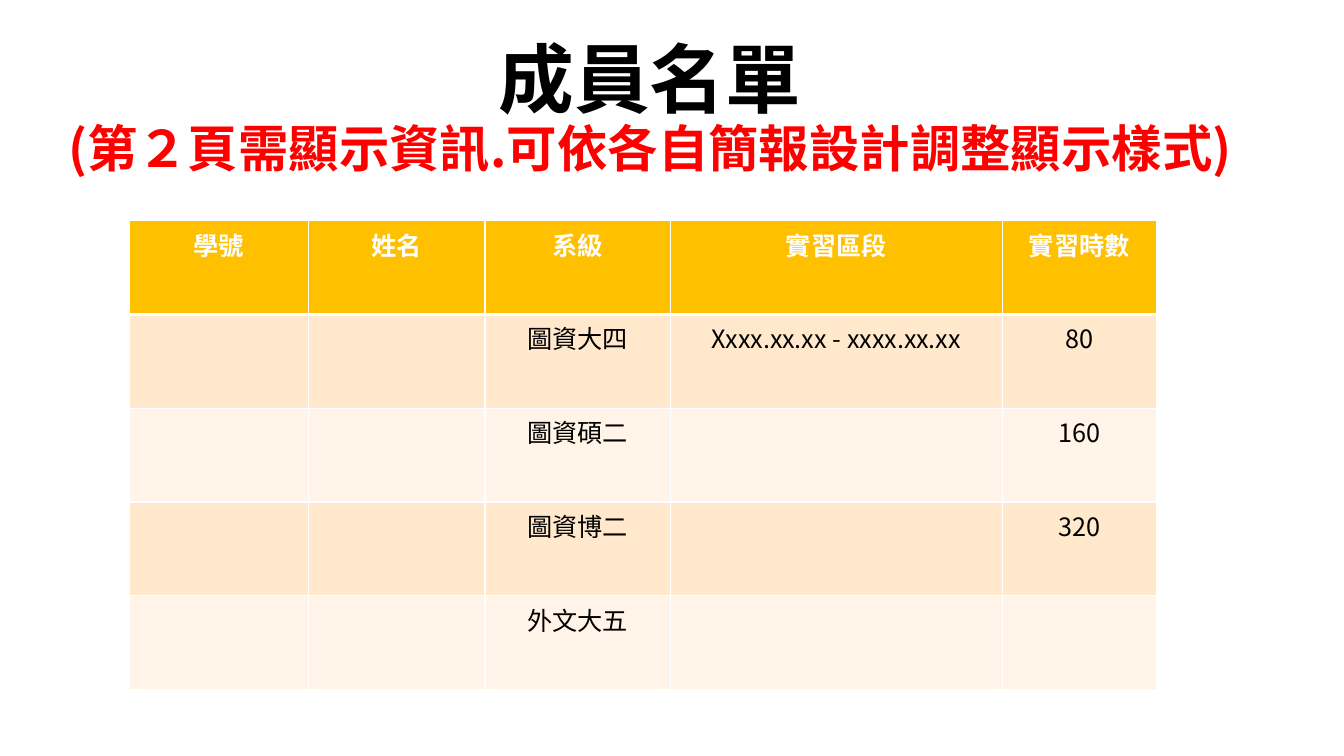
from dataclasses import dataclass

from pptx import Presentation
from pptx.dml.color import RGBColor
from pptx.enum.text import MSO_ANCHOR, MSO_AUTO_SIZE, PP_ALIGN
from pptx.oxml import parse_xml
from pptx.oxml.ns import nsdecls
from pptx.util import Inches, Pt


@dataclass(frozen=True)
class Theme:
    cjk_font: str = "Noto Sans CJK SC"
    latin_font: str = "Calibri"
    text: str = "000000"
    notice: str = "FF0000"
    header_text: str = "FFFFFF"
    header_fill: str = "FFC000"
    band_fills: tuple = ("FFE8CC", "FFF4E7")
    border: str = "FFFFFF"
    title_size: int = 54
    notice_size: int = 36
    table_size: int = 18


THEME = Theme()
TITLE = "成員名單"
NOTICE = "(第２頁需顯示資訊.可依各自簡報設計調整顯示樣式)"
DEPARTMENT_COLUMN = 2
COLUMN_WIDTHS = (1.78, 1.75, 1.84, 3.29, 1.53)
ROW_HEIGHT = 0.93
MEMBERS = (
    ("學號", "姓名", "系級", "實習區段", "實習時數"),
    ("", "", "圖資大四", "Xxxx.xx.xx - xxxx.xx.xx", "80"),
    ("", "", "圖資碩二", "", "160"),
    ("", "", "圖資博二", "", "320"),
    ("", "", "外文大五", "", ""),
)


def add_run(paragraph, text, size, color, bold=False, font=THEME.cjk_font):
    run = paragraph.add_run()
    run.text = text
    run.font.size = Pt(size)
    run.font.bold = bold
    run.font.color.rgb = RGBColor.from_string(color)
    run.font.name = font
    east_asian = f'<a:ea {nsdecls("a")} typeface="{THEME.cjk_font}"/>'
    run.font._element.append(parse_xml(east_asian))


def set_borders(cell, bottom_width, top_width):
    """Draw the four borders, which must precede the fill in the cell's XML."""
    properties = cell._tc.get_or_add_tcPr()
    widths = {"L": 1, "R": 1, "T": top_width, "B": bottom_width}
    for position, (side, width) in enumerate(widths.items()):
        properties.insert(position, parse_xml(
            f'<a:ln{side} {nsdecls("a")} w="{Pt(width)}"><a:solidFill>'
            f'<a:srgbClr val="{THEME.border}"/></a:solidFill></a:ln{side}>'))


def fill_title(slide):
    title = slide.shapes.title
    title.left, title.top = Inches(0.14), Inches(0.52)
    title.width, title.height = Inches(12.61), Inches(1.3)
    frame = title.text_frame
    frame.word_wrap = True
    frame.auto_size = MSO_AUTO_SIZE.NONE
    frame.vertical_anchor = MSO_ANCHOR.BOTTOM
    paragraph = frame.paragraphs[0]
    paragraph.alignment = PP_ALIGN.CENTER
    paragraph.line_spacing = 0.9
    add_run(paragraph, TITLE, THEME.title_size, THEME.text, bold=True)
    paragraph.add_line_break()
    add_run(paragraph, NOTICE, THEME.notice_size, THEME.notice, bold=True)


def fill_cell(cell, text, row, column):
    is_header = row == 0
    fill = THEME.header_fill if is_header else THEME.band_fills[(row - 1) % 2]
    cell.fill.solid()
    cell.fill.fore_color.rgb = RGBColor.from_string(fill)
    set_borders(cell, 3 if is_header else 1, 3 if row == 1 else 1)
    paragraph = cell.text_frame.paragraphs[0]
    paragraph.alignment = PP_ALIGN.CENTER
    paragraph.font.size = Pt(THEME.table_size)
    if text:
        uses_latin = not is_header and column == DEPARTMENT_COLUMN
        add_run(paragraph, text, THEME.table_size,
                THEME.header_text if is_header else THEME.text,
                bold=is_header,
                font=THEME.latin_font if uses_latin else THEME.cjk_font)


def add_member_table(slide):
    table = slide.shapes.add_table(
        len(MEMBERS), len(COLUMN_WIDTHS), Inches(1.28), Inches(2.19),
        Inches(sum(COLUMN_WIDTHS)), Inches(ROW_HEIGHT * len(MEMBERS))).table
    for column, width in zip(table.columns, COLUMN_WIDTHS):
        column.width = Inches(width)
    for row, values in enumerate(MEMBERS):
        table.rows[row].height = Inches(ROW_HEIGHT)
        for column, text in enumerate(values):
            fill_cell(table.cell(row, column), text, row, column)


def main():
    presentation = Presentation()
    presentation.slide_width = Inches(13.33)
    presentation.slide_height = Inches(7.5)
    slide = presentation.slides.add_slide(presentation.slide_layouts[0])
    subtitle = slide.placeholders[1].element
    subtitle.getparent().remove(subtitle)
    fill_title(slide)
    add_member_table(slide)
    presentation.save("out.pptx")


if __name__ == "__main__":
    main()
